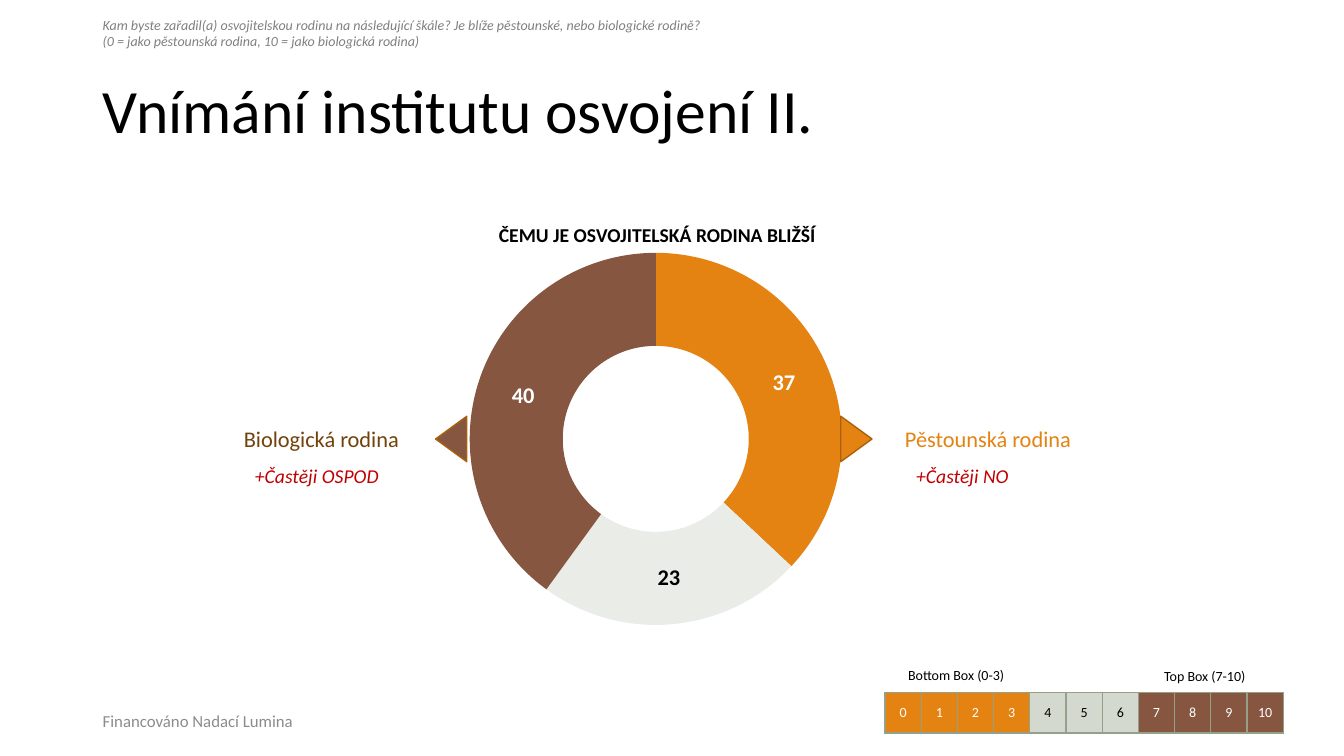
from dataclasses import dataclass

from lxml import etree
from pptx import Presentation
from pptx import util as u
from pptx.chart.data import CategoryChartData
from pptx.dml.color import RGBColor
from pptx.enum import chart as ch
from pptx.enum import shapes, text
from pptx.oxml import parse_xml
from pptx.oxml.ns import nsdecls, qn

WIDE, HIGH = u.Inches(13.333), u.Inches(7.5)
FONT = "Calibri"
BLACK = RGBColor(0x00, 0x00, 0x00)
WHITE = RGBColor(0xFF, 0xFF, 0xFF)
GREY = RGBColor(0x80, 0x80, 0x80)
SILVER = RGBColor(0x8C, 0x8C, 0x8C)
RED = RGBColor(0xC0, 0x00, 0x00)
ORANGE = RGBColor(0xE4, 0x83, 0x12)
RUST = RGBColor(0xA9, 0x61, 0x0D)
UMBER = RGBColor(0x72, 0x42, 0x09)
BROWN = RGBColor(0x86, 0x56, 0x40)
PALE = RGBColor(0xEA, 0xEC, 0xE7)
SAGE = RGBColor(0xD4, 0xD9, 0xCF)
MOSS = RGBColor(0x94, 0xA0, 0x88)


@dataclass
class Box:
    left: float
    top: float
    width: float
    height: float

    def emu(self) -> tuple:
        return (
            round(WIDE * self.left / 100),
            round(HIGH * self.top / 100),
            round(WIDE * self.width / 100),
            round(HIGH * self.height / 100),
        )


@dataclass
class Side:
    name: str
    note: str
    tint: RGBColor
    fill: RGBColor
    left: float
    tip: float
    turn: int


@dataclass
class Band:
    first: int
    last: int
    fill: RGBColor
    ink: RGBColor


SIDES = [
    Side("Pěstounská rodina", "+Častěji NO", ORANGE, ORANGE, 66.6, 62.03, 90),
    Side("Biologická rodina", "+Častěji OSPOD", UMBER, BROWN, 17.4, 31.88, 270),
]
BANDS = [
    Band(0, 3, ORANGE, WHITE),
    Band(4, 6, SAGE, BLACK),
    Band(7, 10, BROWN, WHITE),
]
SLICES = [(37, ORANGE), (23, PALE), (40, BROWN)]
ASK = (
    "Kam byste zařadil(a) osvojitelskou rodinu na následující škále? "
    "Je blíže pěstounské, nebo biologické rodině?\n"
    "(0 = jako pěstounská rodina, 10 = jako biologická rodina)"
)


def style(font, size: float, ink: RGBColor, bold=False, slant=False) -> None:
    font.name, font.size = FONT, u.Pt(size)
    font.bold, font.italic = bold, slant
    font.color.rgb = ink


def write(slide, words: str, box: Box, size=10, ink=BLACK, bold=False,
          slant=False, wrap=True, mid=False, lead=None) -> None:
    frame = slide.shapes.add_textbox(*box.emu()).text_frame
    frame.word_wrap = wrap
    frame.vertical_anchor = text.MSO_ANCHOR.MIDDLE if mid else text.MSO_ANCHOR.TOP
    frame.text = words
    for para in frame.paragraphs:
        para.line_spacing = lead
        for run in para.runs:
            style(run.font, size, ink, bold, slant)


def draw_ring(slide, box: Box) -> None:
    data = CategoryChartData(number_format="###0")
    data.categories = ["1", "2", "3"]
    data.add_series("Series 1", [value for value, _ in SLICES])
    chart = slide.shapes.add_chart(
        ch.XL_CHART_TYPE.DOUGHNUT, *box.emu(), data).chart
    chart.has_legend = chart.has_title = False
    style(chart.font, 11, BLACK)
    plot = chart.plots[0]
    plot.vary_by_categories = True
    ring = plot.series[0]
    labels = ring.data_labels
    labels.show_value, labels.show_percentage = True, False
    labels.number_format, labels.number_format_is_linked = "###0", False
    style(labels.font, 16, WHITE, bold=True)
    for spot, (_, tint) in enumerate(SLICES):
        fill = ring.points[spot].format.fill
        fill.solid()
        fill.fore_color.rgb = tint
    style(ring.points[1].data_label.font, 16, BLACK, bold=True)
    area = chart._chartSpace.chart.plotArea
    for old in area.findall(qn("c:layout")):
        area.remove(old)
    share = 0.93
    edge = (1 - share) / 2
    lay = parse_xml(f"<c:layout {nsdecls('c')}><c:manualLayout/></c:layout>")
    for tag, val in [("layoutTarget", "inner"), ("xMode", "edge"),
                     ("yMode", "edge"), ("x", edge), ("y", edge),
                     ("w", share), ("h", share)]:
        etree.SubElement(lay[0], qn(f"c:{tag}")).set("val", str(val))
    area.insert(0, lay)


def draw_side(slide, side: Side) -> None:
    tip = slide.shapes.add_shape(
        shapes.MSO_SHAPE.ISOSCELES_TRIANGLE, *Box(side.tip, 56, 3.38, 4.13).emu())
    tip.rotation = side.turn
    tip.shadow.inherit = False
    tip.fill.solid()
    tip.fill.fore_color.rgb = side.fill
    tip.line.color.rgb = RUST
    tip.line.width = u.Pt(1)
    write(slide, side.name, Box(side.left, 55.6, 14.18, 4.93), size=16, ink=side.tint)
    write(slide, side.note, Box(side.left + 0.83, 60.67, 13.35, 4.53),
          size=14, ink=RED, slant=True)


def rule(cell) -> None:
    props = cell._tc.get_or_add_tcPr()
    for spot, (edge, size) in enumerate([("L", 1), ("R", 1), ("T", 1), ("B", 2)]):
        props.insert(spot, parse_xml(
            f'<a:ln{edge} {nsdecls("a")} w="{u.Pt(size)}"><a:solidFill>'
            f'<a:srgbClr val="{MOSS}"/></a:solidFill></a:ln{edge}>'))


def draw_scale(slide, box: Box) -> None:
    count = BANDS[-1].last + 1
    table = slide.shapes.add_table(1, count, *box.emu()).table
    table.first_row = table.horz_banding = False
    for band in BANDS:
        for step in range(band.first, band.last + 1):
            cell = table.cell(0, step)
            cell.fill.solid()
            cell.fill.fore_color.rgb = band.fill
            cell.margin_left = cell.margin_right = 0
            cell.vertical_anchor = text.MSO_ANCHOR.MIDDLE
            cell.text = str(step)
            para = cell.text_frame.paragraphs[0]
            para.alignment = text.PP_ALIGN.CENTER
            style(para.runs[0].font, 10, band.ink)
            rule(cell)


def main() -> None:
    deck = Presentation()
    deck.slide_width, deck.slide_height = WIDE, HIGH
    slide = deck.slides.add_slide(deck.slide_layouts[6])
    write(slide, "Vnímání institutu osvojení II.", Box(6.9, 5.33, 86.25, 19.33),
          size=44, mid=True, lead=0.9)
    write(slide, "Financováno Nadací Lumina", Box(6.9, 92.67, 74.48, 5.33),
          size=12, ink=SILVER, mid=True)
    draw_ring(slide, Box(28.13, 31.6, 41.33, 52.93))
    for side in SIDES:
        draw_side(slide, side)
    draw_scale(slide, Box(65.85, 91.6, 29.63, 5.33))
    write(slide, "Bottom Box (0-3)", Box(66.83, 87.47, 14.55, 3.6))
    write(slide, "Top Box (7-10)", Box(85.88, 87.6, 12.6, 3.6))
    write(slide, "ČEMU JE OSVOJITELSKÁ RODINA BLIŽŠÍ",
          Box(36.38, 28.8, 29.55, 4.53), size=14, bold=True)
    write(slide, ASK, Box(6.9, 1.47, 47.1, 5.87), ink=GREY, slant=True, wrap=False)
    deck.save("out.pptx")


if __name__ == "__main__":
    main()
